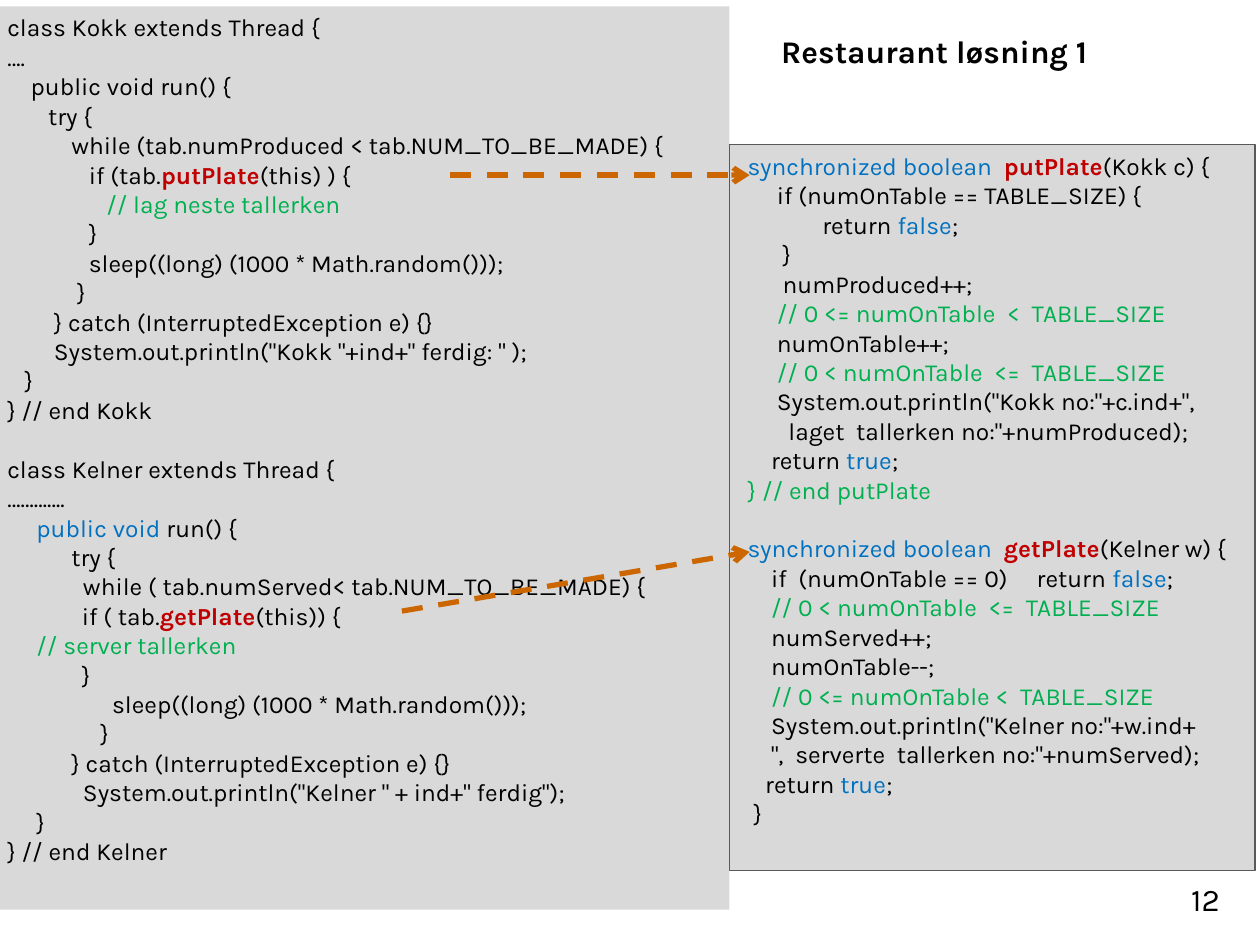
from dataclasses import dataclass

import pptx
import pptx.dml.color
import pptx.enum.dml
import pptx.enum.shapes
import pptx.enum.text
import pptx.oxml
import pptx.oxml.ns
import pptx.util
from pptx.util import Inches

FONT = "Karla"
COLORS = {
    "text": "000000",
    "keyword": "0070C0",
    "comment": "00B050",
    "method": "C00000",
    "panel": "D9D9D9",
    "border": "595959",
    "arrow": "CC6600",
}
BLOCK_GAP = 16.8


@dataclass(frozen=True)
class Span:
    text: str
    color: str
    bold: bool = False


@dataclass(frozen=True)
class Panel:
    left: float
    top: float
    width: float
    height: float
    bordered: bool
    blocks: tuple


@dataclass(frozen=True)
class CallArrow:
    start: tuple
    end: tuple


def keyword(text: str) -> Span:
    return Span(text, "keyword")


def comment(text: str) -> Span:
    return Span(text, "comment")


def method(text: str) -> Span:
    return Span(text, "method", True)


KOKK = (
    "class Kokk extends Thread {",
    "….",
    "    public void run() {",
    "       try {",
    "           while (tab.numProduced < tab.NUM_TO_BE_MADE) {",
    ("              if (tab.", method("putPlate"), "(this) ) {"),
    comment("                 // lag neste tallerken"),
    "              }",
    "              sleep((long) (1000 * Math.random()));",
    "            }",
    "        } catch (InterruptedException e) {}",
    '        System.out.println("Kokk "+ind+" ferdig: " );',
    "   }",
    "} // end Kokk",
)
KELNER = (
    "class Kelner extends Thread {",
    "………….",
    (keyword("     public void "), "run() {"),
    "           try {",
    "             while ( tab.numServed< tab.NUM_TO_BE_MADE) {",
    ("  \t  if ( tab.", method("getPlate"), "(this)) {"),
    comment("     // server tallerken"),
    "\t  }",
    "                  sleep((long) (1000 * Math.random()));",
    "                }",
    "           } catch (InterruptedException e) {}",
    '             System.out.println("Kelner " + ind+" ferdig");',
    "     }",
    "} // end Kelner",
)
PUT_PLATE = (
    (keyword(" synchronized boolean  "), method("putPlate"), "(Kokk c) {"),
    "      if (numOnTable == TABLE_SIZE) {",
    ("\t   return ", keyword("false"), ";"),
    "       }",
    "       numProduced++;",
    comment("      // 0 <= numOnTable  <  TABLE_SIZE"),
    "      numOnTable++;",
    comment("      // 0 < numOnTable  <=  TABLE_SIZE"),
    '      System.out.println("Kokk no:"+c.ind+",',
    '        laget  tallerken no:"+numProduced);',
    ("     return ", keyword("true"), ";"),
    comment(" } // end putPlate"),
)
GET_PLATE = (
    (keyword(" synchronized boolean  "), method("getPlate"), "(Kelner w) {"),
    ("     if  (numOnTable == 0)     return ", keyword("false"), ";"),
    comment("     // 0 < numOnTable  <=  TABLE_SIZE"),
    "     numServed++;",
    "     numOnTable--;",
    comment("     // 0 <= numOnTable <  TABLE_SIZE"),
    '     System.out.println("Kelner no:"+w.ind+',
    '     ",  serverte  tallerken no:"+numServed);',
    ("    return ", keyword("true"), ";"),
    "  }",
)
PANELS = (
    Panel(-0.04, 0.05, 5.83, 7.17, False, (KOKK, KELNER)),
    Panel(5.79, 1.15, 4.17, 5.76, True, (PUT_PLATE, GET_PLATE)),
)
ARROWS = (
    CallArrow((3.57, 1.39), (5.95, 1.39)),
    CallArrow((3.19, 4.85), (5.95, 4.38)),
)


def rgb(name: str) -> pptx.dml.color.RGBColor:
    return pptx.dml.color.RGBColor.from_string(COLORS[name])


def format_paragraph(para, size: float, align, bold: bool = False) -> None:
    para.alignment = align
    para.font.name = FONT
    para.font.size = pptx.util.Pt(size)
    para.font.bold = bold
    para.font.color.rgb = rgb("text")


def write_line(para, line) -> None:
    format_paragraph(para, 14, pptx.enum.text.PP_ALIGN.LEFT)
    for part in line if isinstance(line, tuple) else (line,):
        span = part if isinstance(part, Span) else Span(part, "text")
        run = para.add_run()
        run.text = span.text
        run.font.color.rgb = rgb(span.color)
        if span.bold:
            run.font.bold = True


def draw_panel(page, panel: Panel) -> None:
    box = page.shapes.add_shape(
        pptx.enum.shapes.MSO_SHAPE.RECTANGLE,
        Inches(panel.left), Inches(panel.top), Inches(panel.width), Inches(panel.height))
    box.shadow.inherit = False
    box.fill.solid()
    box.fill.fore_color.rgb = rgb("panel")
    if panel.bordered:
        box.line.color.rgb = rgb("border")
        box.line.width = pptx.util.Pt(0.75)
    else:
        box.line.fill.background()
    frame = box.text_frame
    frame.word_wrap = True
    frame.vertical_anchor = pptx.enum.text.MSO_ANCHOR.TOP
    for block_index, block in enumerate(panel.blocks):
        for line_index, line in enumerate(block):
            first = block_index == line_index == 0
            para = frame.paragraphs[0] if first else frame.add_paragraph()
            if block_index and not line_index:
                para.space_before = pptx.util.Pt(BLOCK_GAP)
            write_line(para, line)


def draw_arrow(page, arrow: CallArrow) -> None:
    connector = page.shapes.add_connector(
        pptx.enum.shapes.MSO_CONNECTOR.STRAIGHT,
        *(Inches(value) for value in arrow.start + arrow.end))
    connector.line.color.rgb = rgb("arrow")
    connector.line.width = pptx.util.Pt(3)
    connector.line.dash_style = pptx.enum.dml.MSO_LINE.DASH
    head = pptx.oxml.parse_xml(
        f'<a:tailEnd {pptx.oxml.ns.nsdecls("a")} type="arrow"/>')
    connector.line._get_or_add_ln().append(head)
    connector._element.spPr.append(
        pptx.oxml.parse_xml(f'<a:effectLst {pptx.oxml.ns.nsdecls("a")}/>'))


def write_label(box, text: str, size: float, align, anchor, bold: bool = False) -> None:
    frame = box.text_frame
    frame.text = text
    frame.word_wrap = True
    frame.auto_size = pptx.enum.text.MSO_AUTO_SIZE.NONE
    frame.vertical_anchor = anchor
    format_paragraph(frame.paragraphs[0], size, align, bold)


def main() -> None:
    deck = pptx.Presentation()
    deck.slide_width, deck.slide_height = Inches(10), Inches(7.5)
    page = deck.slides.add_slide(deck.slide_layouts[5])
    align, anchor = pptx.enum.text.PP_ALIGN, pptx.enum.text.MSO_ANCHOR

    title = page.shapes.title
    title.left, title.top = Inches(6.1), Inches(0.2)
    title.width, title.height = Inches(2.99), Inches(0.4)
    write_label(title, "Restaurant løsning 1", 18, align.LEFT, anchor.TOP, True)

    number = page.shapes.add_textbox(Inches(7.7), Inches(6.83), Inches(2.08), Inches(0.5))
    write_label(number, "12", 18, align.RIGHT, anchor.BOTTOM)

    for panel in PANELS:
        draw_panel(page, panel)
    for arrow in ARROWS:
        draw_arrow(page, arrow)
    deck.save("out.pptx")


if __name__ == "__main__":
    main()
